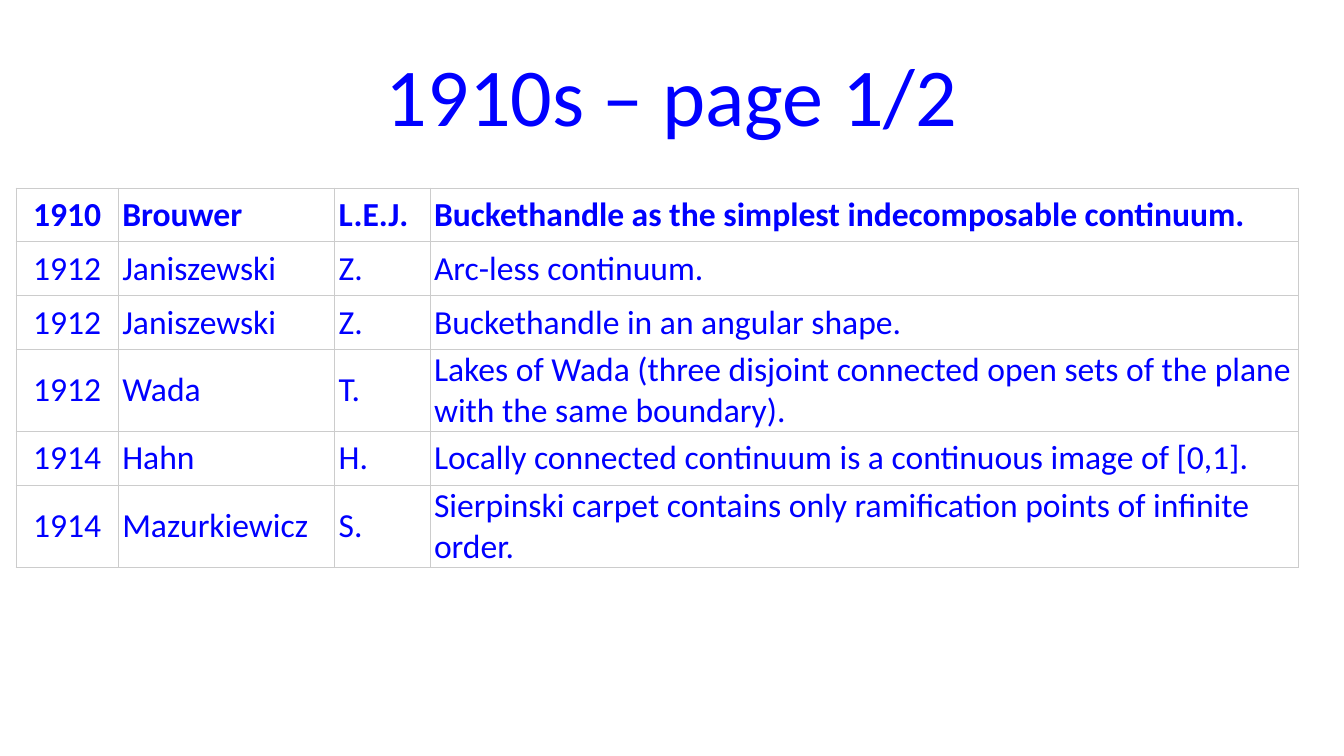
from lxml.etree import SubElement
from pptx import Presentation
from pptx.dml.color import RGBColor
from pptx.enum.text import MSO_ANCHOR, PP_ALIGN
from pptx.oxml.ns import qn
from pptx.util import Inches, Pt

COLUMN_WIDTHS = [0.76, 1.61, 0.71, 6.46]
RESULTS = [
    ("1910", "Brouwer", "L.E.J.", "Buckethandle as the simplest indecomposable continuum."),
    ("1912", "Janiszewski", "Z.", "Arc-less continuum."),
    ("1912", "Janiszewski", "Z.", "Buckethandle in an angular shape."),
    ("1912", "Wada", "T.", "Lakes of Wada (three disjoint connected open sets of the plane "
                           "with the same boundary)."),
    ("1914", "Hahn", "H.", "Locally connected continuum is a continuous image of [0,1]."),
    ("1914", "Mazurkiewicz", "S.", "Sierpinski carpet contains only ramification points of "
                                   "infinite order."),
]


def color(hex_code):
    return RGBColor.from_string(hex_code)


class SlideBuilder:
    font = "Calibri"
    ink = "0000FF"
    grid = "CCCCCC"

    def __init__(self, slide):
        self.slide = slide

    def format_text(self, frame, size, align, bold=False):
        for paragraph in frame.paragraphs:
            paragraph.alignment = align
            for run in paragraph.runs:
                run.font.name = self.font
                run.font.size = Pt(size)
                run.font.bold = bold
                run.font.color.rgb = color(self.ink)

    def title(self, text, left, top, width, height):
        heading = self.slide.shapes.title
        heading.left, heading.top = Inches(left), Inches(top)
        heading.width, heading.height = Inches(width), Inches(height)
        heading.text_frame.text = text
        heading.text_frame.vertical_anchor = MSO_ANCHOR.MIDDLE
        self.format_text(heading.text_frame, 44, PP_ALIGN.CENTER)

    def cell_borders(self, cell):
        properties = cell._tc.get_or_add_tcPr()
        for position, side in enumerate(("a:lnL", "a:lnR", "a:lnT", "a:lnB")):
            line = SubElement(properties, qn(side), w=str(Pt(0.6)))
            fill = SubElement(line, qn("a:solidFill"))
            SubElement(fill, qn("a:srgbClr"), val=self.grid)
            properties.insert(position, line)  # borders precede the fill

    def table(self, rows, widths, left, top, row_height):
        frame = self.slide.shapes.add_table(
            len(rows), len(widths), Inches(left), Inches(top),
            Inches(sum(widths)), Inches(row_height * len(rows)))
        table = frame.table
        table.first_row = table.horz_banding = False
        for column, width in zip(table.columns, widths):
            column.width = Inches(width)
        for r, row in enumerate(rows):
            for c, text in enumerate(row):
                cell = table.cell(r, c)
                cell.text_frame.text = text
                cell.margin_left = cell.margin_right = Inches(0.03)
                cell.margin_top = cell.margin_bottom = 0
                cell.vertical_anchor = MSO_ANCHOR.MIDDLE
                cell.fill.background()
                # Years are centred, the first row is bold
                align = PP_ALIGN.CENTER if c == 0 else PP_ALIGN.LEFT
                self.format_text(cell.text_frame, 18, align, bold=r == 0)
                self.cell_borders(cell)


def main():
    presentation = Presentation()
    presentation.slide_width = Inches(10)
    presentation.slide_height = presentation.slide_width * 9 // 16
    title_only = presentation.slide_layouts[5]
    builder = SlideBuilder(presentation.slides.add_slide(title_only))

    # Heading
    builder.title("1910s – page 1/2", 0.5, 0.23, 9, 0.94)

    # Results by year
    builder.table(RESULTS, COLUMN_WIDTHS, 0.12, 1.4, 0.4)

    presentation.save("out.pptx")


if __name__ == "__main__":
    main()
